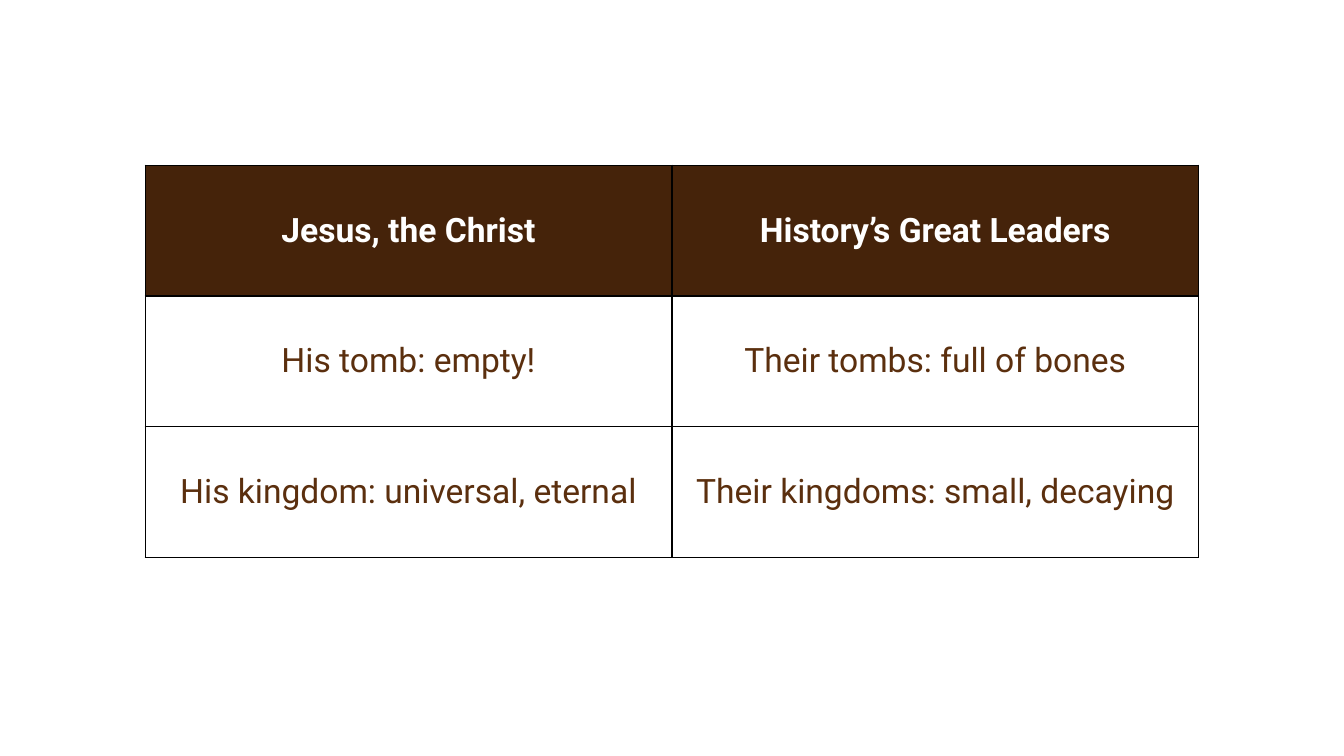
from dataclasses import dataclass

from lxml import etree
from pptx import Presentation
from pptx.dml.color import RGBColor
from pptx.enum.text import MSO_ANCHOR, PP_ALIGN
from pptx.oxml.ns import qn
from pptx.util import Inches, Pt

CENTER = PP_ALIGN.CENTER
MIDDLE = MSO_ANCHOR.MIDDLE
BLANK_LAYOUT = 6
BORDER_SIDES = ("a:lnL", "a:lnR", "a:lnT", "a:lnB")


@dataclass(frozen=True)
class Theme:
    font: str = "Roboto"
    text_size: int = 18
    header_fill: str = "45230A"
    header_text: str = "FFFFFF"
    body_text: str = "5B2F0E"
    border: str = "000000"
    border_width: float = 0.75


THEME = Theme()
SLIDE_WIDTH = Inches(10)
SLIDE_HEIGHT = SLIDE_WIDTH * 9 // 16
TABLE_TOP = Inches(1.23)
COLUMN_WIDTH = Inches(3.92)
ROW_HEIGHT = Inches(2.92) // 3
COMPARISON = (
    ("Jesus, the Christ", "History’s Great Leaders"),
    ("His tomb: empty!", "Their tombs: full of bones"),
    ("His kingdom: universal, eternal", "Their kingdoms: small, decaying"),
)


def add_borders(cell):
    properties = cell._tc.get_or_add_tcPr()
    for side in BORDER_SIDES:
        line = etree.SubElement(properties, qn(side), w=str(Pt(THEME.border_width)))
        fill = etree.SubElement(line, qn("a:solidFill"))
        etree.SubElement(fill, qn("a:srgbClr"), val=THEME.border)


def format_cell(cell, text, is_header):
    add_borders(cell)
    if is_header:
        cell.fill.solid()
        cell.fill.fore_color.rgb = RGBColor.from_string(THEME.header_fill)
    else:
        cell.fill.background()
    cell.vertical_anchor = MIDDLE
    cell.text = text
    paragraph = cell.text_frame.paragraphs[0]
    paragraph.alignment = CENTER
    font = paragraph.font
    font.name = THEME.font
    font.size = Pt(THEME.text_size)
    font.bold = is_header
    color = THEME.header_text if is_header else THEME.body_text
    font.color.rgb = RGBColor.from_string(color)


def add_comparison_table(slide, rows):
    row_count, column_count = len(rows), len(rows[0])
    width = COLUMN_WIDTH * column_count
    table = slide.shapes.add_table(
        row_count, column_count, (SLIDE_WIDTH - width) // 2, TABLE_TOP,
        width, ROW_HEIGHT * row_count,
    ).table
    table.horz_banding = False
    for row_index, texts in enumerate(rows):
        for column_index, text in enumerate(texts):
            format_cell(table.cell(row_index, column_index), text, row_index == 0)


def main():
    presentation = Presentation()
    presentation.slide_width = SLIDE_WIDTH
    presentation.slide_height = SLIDE_HEIGHT
    slide = presentation.slides.add_slide(presentation.slide_layouts[BLANK_LAYOUT])
    add_comparison_table(slide, COMPARISON)
    presentation.save("out.pptx")


if __name__ == "__main__":
    main()
